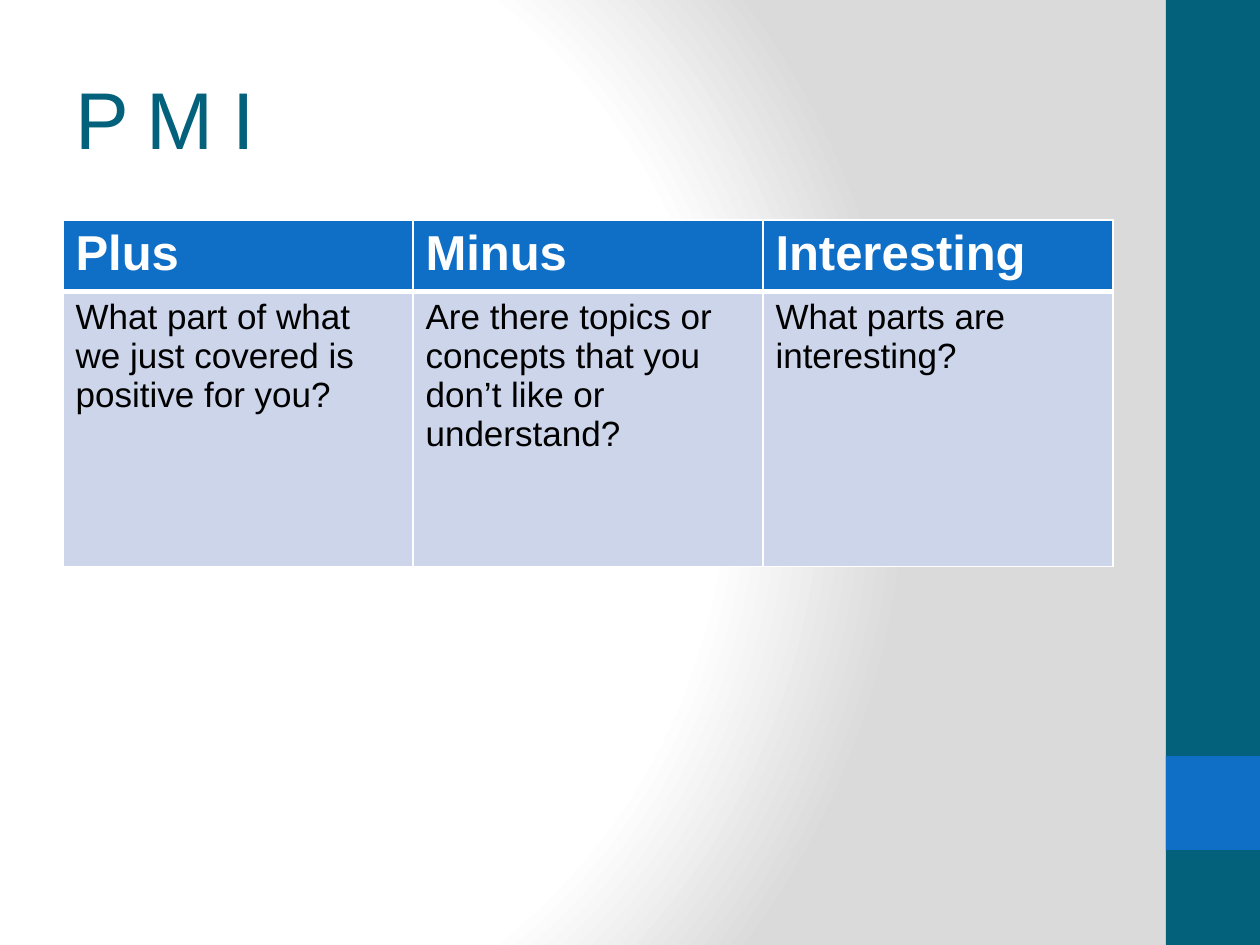
from typing import NamedTuple

from lxml import etree
from pptx import Presentation
from pptx import util as u
from pptx.dml.color import RGBColor
from pptx.enum import shapes, text
from pptx.oxml import parse_xml
from pptx.oxml.ns import nsdecls, qn

PX = 914400 / 126
FONT = "Arial"
TEAL, BLUE, PALE = "04617B", "0F6FC6", "CCD5EA"
WHITE, BLACK, GRAY = "FFFFFF", "000000", "DADADA"


class Box(NamedTuple):
    left: int
    top: int
    wide: int
    high: int


class Band(NamedTuple):
    box: Box
    color: str


class Row(NamedTuple):
    high: int
    fill: str
    ink: str
    size: int
    bold: bool
    base: int
    words: list[str]


BANDS = [
    Band(Box(1166, 0, 94, 945), TEAL),
    Band(Box(1166, 756, 94, 94), BLUE),
]
TITLE = Box(63, 38, 1050, 158)
GRID = Box(63, 220, 1050, 342)
ROWS = [
    Row(67, BLUE, WHITE, 28, True, 3, ["Plus", "Minus", "Interesting"]),
    Row(275, PALE, BLACK, 20, False, 1, [
        "What part of what we just covered is positive for you?",
        "Are there topics or concepts that you don’t like or understand?",
        "What parts are interesting?",
    ]),
]


def px(num: int) -> int:
    return round(num * PX)


def place(box: Box) -> list[int]:
    return [px(num) for num in box]


def rgb(color: str) -> RGBColor:
    return RGBColor.from_string(color)


def style(para, size: int, color: str, bold: bool = False) -> None:
    font = para.font
    font.name, font.size, font.bold = FONT, u.Pt(size), bold
    font.color.rgb = rgb(color)


def paint_back(slide) -> None:
    slide.background.fill.gradient()
    old = slide.element.find(".//" + qn("a:gradFill"))
    stops = "".join(
        f'<a:gs pos="{pos * 1000}"><a:srgbClr val="{color}"/></a:gs>'
        for pos, color in [(0, WHITE), (75, WHITE), (100, GRAY)]
    )
    new = parse_xml(
        f'<a:gradFill {nsdecls("a")} rotWithShape="1"><a:gsLst>{stops}</a:gsLst>'
        '<a:path path="circle"><a:fillToRect l="20000" t="50000" '
        'r="100000" b="50000"/></a:path></a:gradFill>'
    )
    old.getparent().replace(old, new)


def draw_band(slide, band: Band) -> None:
    shape = slide.shapes.add_shape(shapes.MSO_SHAPE.RECTANGLE, *place(band.box))
    shape.shadow.inherit = False
    shape.fill.solid()
    shape.fill.fore_color.rgb = rgb(band.color)
    shape.line.fill.background()


def draw_title(slide) -> None:
    frame = slide.shapes.add_textbox(*place(TITLE)).text_frame
    frame.word_wrap = True
    frame.vertical_anchor = text.MSO_ANCHOR.MIDDLE
    para = frame.paragraphs[0]
    run = para.add_run()
    run.text = "P M I"
    style(para, 46, TEAL)
    run.font._element.set("spc", "-100")


def edge(cell, side: str, width: int) -> None:
    props = cell._tc.get_or_add_tcPr()
    line = etree.SubElement(props, qn(f"a:ln{side}"), w=str(u.Pt(width)))
    fill = etree.SubElement(line, qn("a:solidFill"))
    etree.SubElement(fill, qn("a:srgbClr"), val=WHITE)


def fill_cell(cell, row: Row, words: str) -> None:
    for side, width in zip("LRTB", (1, 1, 1, row.base)):
        edge(cell, side, width)
    cell.fill.solid()
    cell.fill.fore_color.rgb = rgb(row.fill)
    cell.text = words
    style(cell.text_frame.paragraphs[0], row.size, row.ink, row.bold)


def draw_grid(slide) -> None:
    count = len(ROWS[0].words)
    table = slide.shapes.add_table(len(ROWS), count, *place(GRID)).table
    for col in table.columns:
        col.width = px(GRID.wide // count)
    for i, row in enumerate(ROWS):
        table.rows[i].height = px(row.high)
        for j, words in enumerate(row.words):
            fill_cell(table.cell(i, j), row, words)


def main() -> None:
    deck = Presentation()
    deck.slide_width, deck.slide_height = px(1260), px(945)
    slide = deck.slides.add_slide(deck.slide_layouts[6])
    paint_back(slide)
    for band in BANDS:
        draw_band(slide, band)
    draw_title(slide)
    draw_grid(slide)
    deck.save("out.pptx")


if __name__ == "__main__":
    main()
